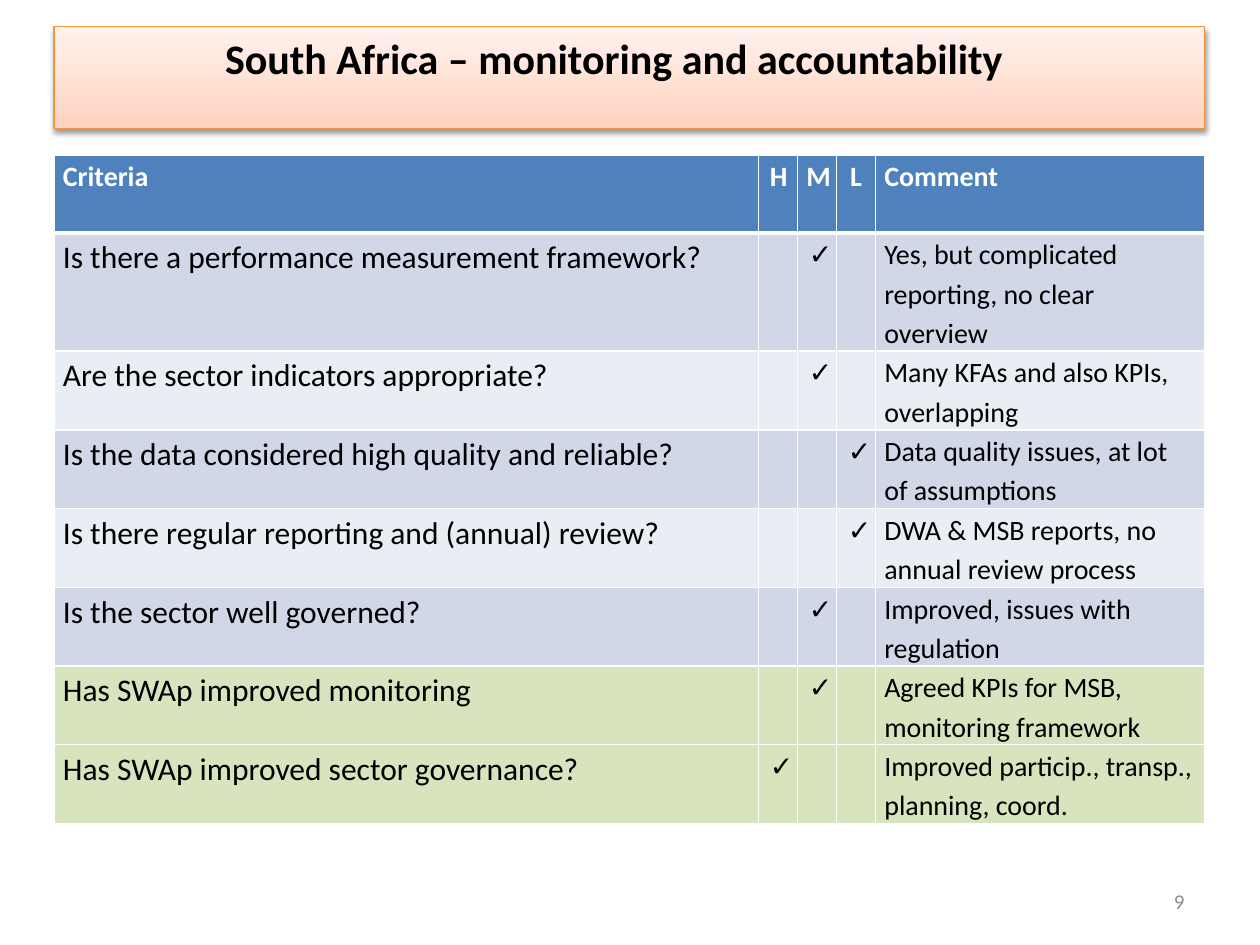
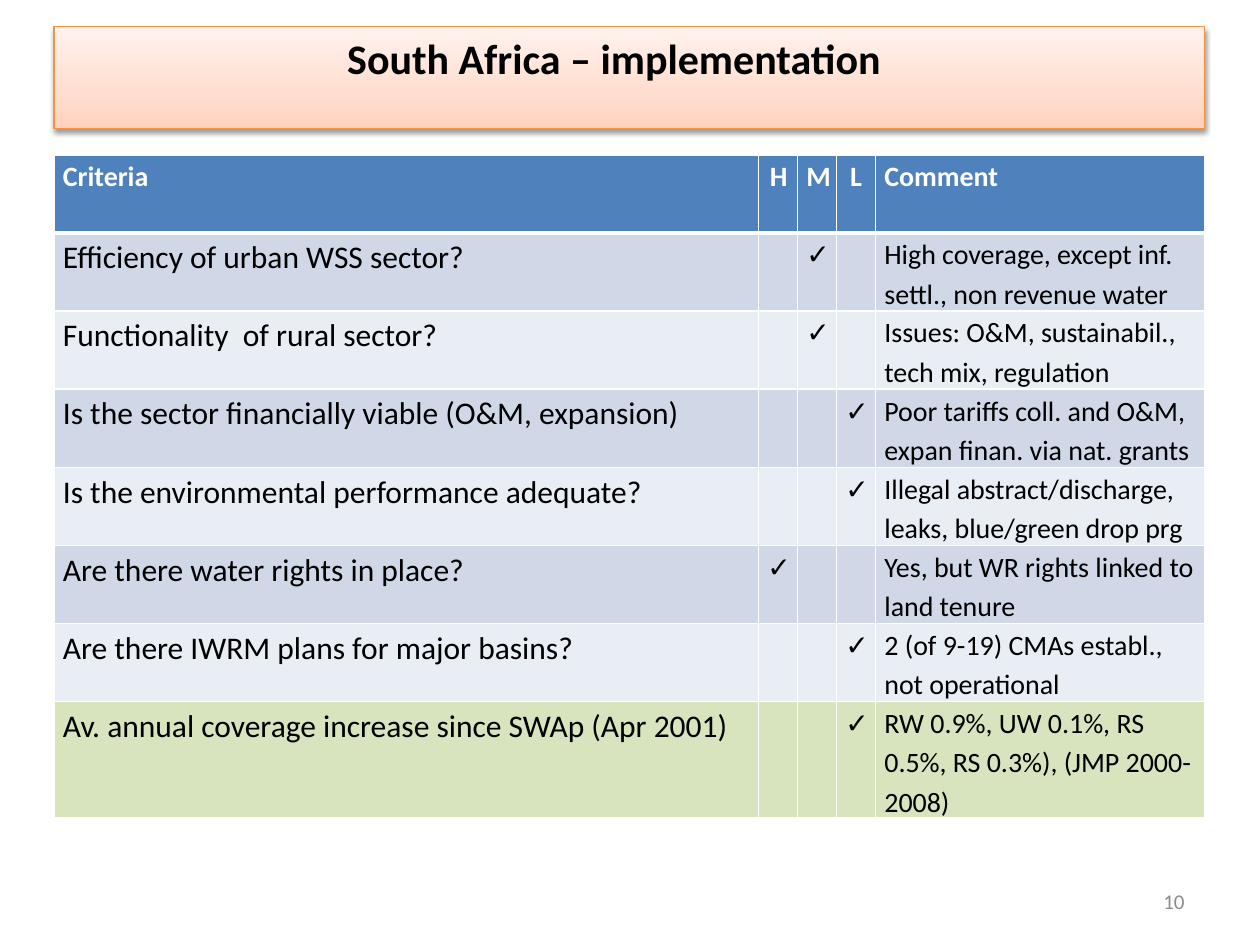
import copy

import lxml.etree
import pptx
import pptx.dml.color
import pptx.enum.shapes
import pptx.enum.text
import pptx.oxml.ns
import pptx.util

Inches = pptx.util.Inches
Pt = pptx.util.Pt
qn = pptx.oxml.ns.qn
ALIGN = pptx.enum.text.PP_ALIGN
ANCHOR = pptx.enum.text.MSO_ANCHOR

FONT = "Calibri"
COLORS = {
    "white": "FFFFFF",
    "black": "000000",
    "header": "4F81BD",
    "band_dark": "D0D8E8",
    "band_light": "E9EDF4",
    "swap": "D7E4BD",
    "banner_line": "F69240",
    "page_number": "8C8C8C",
}
BANNER_STOPS = [(0, "FFD2BD"), (0.35, "FFDED0"), (1, "FFF2ED")]
LEFT, WIDTH = 0.43, 9.13
COLUMN_WIDTHS = [5.59, 0.31, 0.31, 0.31, 2.61]
HEADINGS = ["Criteria", "H", "M", "L", "Comment"]
ROW_HEIGHT = 0.62

MONITORING = [
    ("Is there a performance measurement framework?", "M",
     "Yes, but complicated reporting, no clear overview"),
    ("Are the sector indicators appropriate?", "M", "Many KFAs and also KPIs, overlapping"),
    ("Is the data considered high quality and reliable?", "L",
     "Data quality issues, at lot of assumptions"),
    ("Is there regular reporting and (annual) review?", "L",
     "DWA & MSB reports, no annual review process"),
    ("Is the sector well governed?", "M", "Improved, issues with regulation"),
    ("Has SWAp improved monitoring", "M", "Agreed KPIs for MSB, monitoring framework"),
    ("Has SWAp improved sector governance?", "H",
     "Improved particip., transp., planning, coord."),
]
IMPLEMENTATION = [
    ("Efficiency of urban WSS sector?", "M",
     "High coverage, except inf. settl., non revenue water"),
    ("Functionality  of rural sector?", "M", "Issues: O&M, sustainabil., tech mix, regulation"),
    ("Is the sector financially viable (O&M, expansion)", "L",
     "Poor tariffs coll. and O&M, expan finan. via nat. grants"),
    ("Is the environmental performance adequate?", "L",
     "Illegal abstract/discharge, leaks, blue/green drop prg"),
    ("Are there water rights in place?", "H", "Yes, but WR rights linked to land tenure"),
    ("Are there IWRM plans for major basins?", "L", "2 (of 9-19) CMAs establ., not operational"),
    ("Av. annual coverage increase since SWAp (Apr 2001)", "L",
     "RW 0.9%, UW 0.1%, RS 0.5%, RS 0.3%), (JMP 2000-2008)"),
]


def rgb(name):
    """Return the colour stored under a name."""
    return pptx.dml.color.RGBColor.from_string(COLORS[name])


def write(text_frame, text, size, color, bold=False, align=ALIGN.LEFT):
    """Set one formatted paragraph and return it."""
    text_frame.text = text
    paragraph = text_frame.paragraphs[0]
    paragraph.alignment = align
    for run in paragraph.runs:
        run.font.name = FONT
        run.font.size = Pt(size)
        run.font.bold = bold
        run.font.color.rgb = rgb(color)
    return paragraph


def fill_banner(shape):
    """Give the banner its three-stop vertical gradient."""
    shape.fill.gradient()
    shape.fill.gradient_angle = 90
    stop_list = shape._element.spPr.find(qn("a:gradFill")).find(qn("a:gsLst"))
    stop_list.append(copy.deepcopy(stop_list[-1]))
    for stop, (position, color) in zip(shape.fill.gradient_stops, BANNER_STOPS):
        stop.position = position
        stop.color.rgb = pptx.dml.color.RGBColor.from_string(color)


def add_soft_shadow(shape):
    """Put a soft shadow below a shape."""
    shape.shadow.inherit = False
    effects = shape._element.spPr.find(qn("a:effectLst"))
    shadow = lxml.etree.SubElement(
        effects, qn("a:outerShdw"), blurRad=str(Pt(3.1)), dist=str(Pt(1.6)),
        dir="5400000", rotWithShape="0")
    color = lxml.etree.SubElement(shadow, qn("a:srgbClr"), val=COLORS["black"])
    lxml.etree.SubElement(color, qn("a:alpha"), val="38000")


def add_banner(slide, title):
    """Add the title banner."""
    shape = slide.shapes.add_shape(
        pptx.enum.shapes.MSO_SHAPE.RECTANGLE,
        Inches(LEFT), Inches(0.21), Inches(WIDTH), Inches(0.81))
    fill_banner(shape)
    shape.line.color.rgb = rgb("banner_line")
    shape.line.width = Pt(0.75)
    add_soft_shadow(shape)
    text_frame = shape.text_frame
    text_frame.word_wrap = True
    text_frame.vertical_anchor = ANCHOR.TOP
    text_frame.margin_right = Inches(0.34)
    write(text_frame, title, 24, "black", True, ALIGN.CENTER)


def set_borders(cell, top, bottom):
    """Draw white borders round a cell, with top and bottom widths in points."""
    properties = cell._tc.get_or_add_tcPr()
    for side, width in (("L", 1), ("R", 1), ("T", top), ("B", bottom)):
        line = lxml.etree.SubElement(properties, qn(f"a:ln{side}"), w=str(Pt(width)))
        fill = lxml.etree.SubElement(line, qn("a:solidFill"))
        lxml.etree.SubElement(fill, qn("a:srgbClr"), val=COLORS["white"])


def style_cell(cell, fill, top=1, bottom=1):
    """Set the borders, margins and fill of a cell."""
    set_borders(cell, top, bottom)
    cell.margin_left = cell.margin_right = Inches(0.07)
    cell.margin_top = cell.margin_bottom = 0
    cell.fill.solid()
    cell.fill.fore_color.rgb = rgb(fill)


def write_cell(cell, text, size, color="black", bold=False, align=ALIGN.LEFT, indent=0):
    """Write a table text with its line spacing and left indent."""
    paragraph = write(cell.text_frame, text, size, color, bold, align)
    paragraph.line_spacing = 1.15
    paragraph._p.get_or_add_pPr().set("marL", str(Inches(indent)))


def add_criteria_table(slide, criteria, swap_count, mark_indent):
    """Add the rated criteria, the last swap_count rows in green."""
    row_count = len(criteria) + 1
    table = slide.shapes.add_table(
        row_count, len(HEADINGS), Inches(LEFT), Inches(1.23),
        Inches(WIDTH), Inches(ROW_HEIGHT * row_count)).table
    table.horz_banding = False
    for column, width in zip(table.columns, COLUMN_WIDTHS):
        column.width = Inches(width)
    for cell, heading in zip(table.rows[0].cells, HEADINGS):
        style_cell(cell, "header", bottom=3)
        align = ALIGN.CENTER if heading in ("M", "L") else ALIGN.LEFT
        indent = 0.02 if heading == "H" else 0
        write_cell(cell, heading, 16, "white", True, align, indent)
    for index, (criterion, rating, comment) in enumerate(criteria, start=1):
        band = "band_dark" if index % 2 else "band_light"
        fill = "swap" if index >= row_count - swap_count else band
        cells = list(table.rows[index].cells)
        for cell in cells:
            style_cell(cell, fill, top=3 if index == 1 else 1)
        write_cell(cells[0], criterion, 18)
        write_cell(cells[HEADINGS.index(rating)], "✓", 16, indent=mark_indent)
        write_cell(cells[-1], comment, 16)


def add_page_number(slide, number):
    """Add the page number at the bottom right."""
    box = slide.shapes.add_textbox(Inches(7.17), Inches(6.95), Inches(2.33), Inches(0.4))
    box.text_frame.word_wrap = True
    box.text_frame.vertical_anchor = ANCHOR.MIDDLE
    write(box.text_frame, str(number), 12, "page_number", align=ALIGN.RIGHT)


def add_criteria_slide(presentation, number, title, criteria, swap_count, mark_indent):
    """Add one slide with banner, criteria table and page number."""
    slide = presentation.slides.add_slide(presentation.slide_layouts[6])
    add_criteria_table(slide, criteria, swap_count, mark_indent)
    add_banner(slide, title)
    add_page_number(slide, number)


def main():
    """Build and save the presentation."""
    presentation = pptx.Presentation()
    presentation.slide_width = Inches(10)
    presentation.slide_height = Inches(7.5)
    add_criteria_slide(presentation, 9, "South Africa – monitoring and accountability",
                       MONITORING, 2, 0.02)
    add_criteria_slide(presentation, 10, "South Africa – implementation",
                       IMPLEMENTATION, 1, 0)
    presentation.save("out.pptx")


if __name__ == "__main__":
    main()
